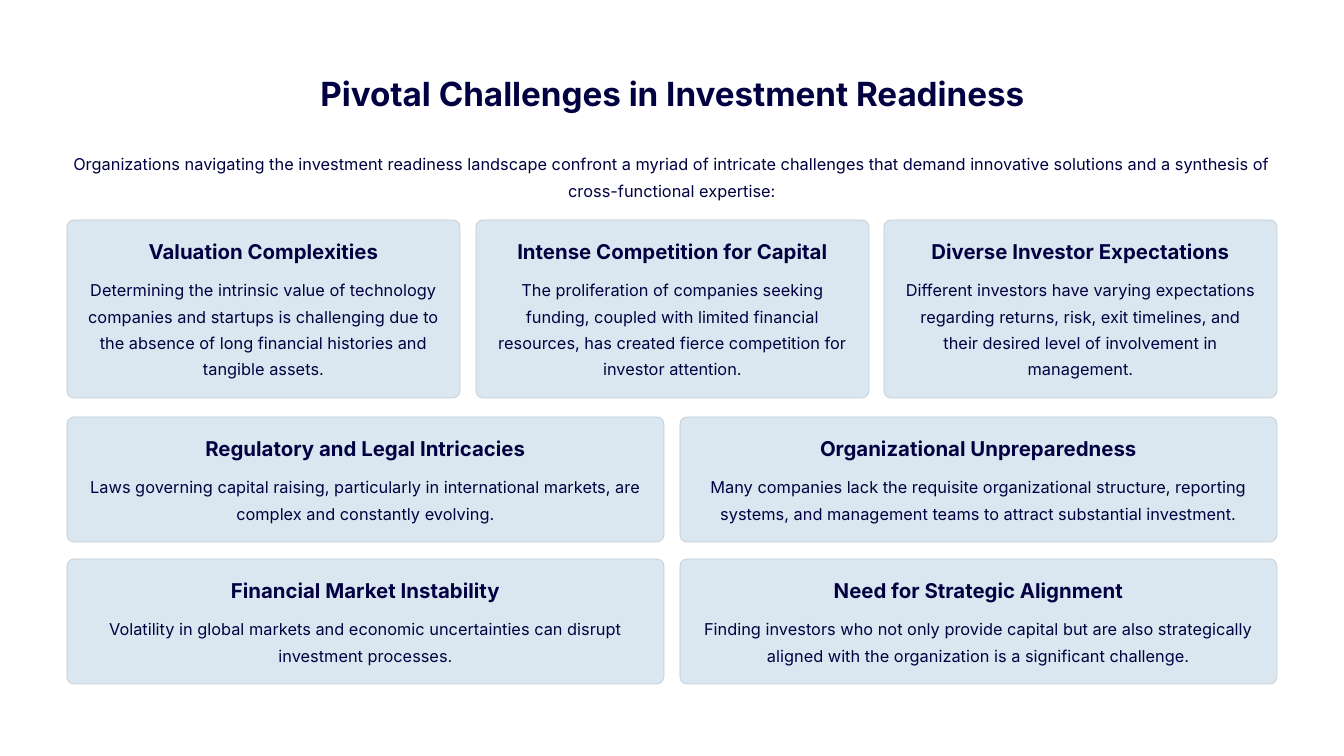
from pptx import Presentation
from pptx.dml.color import RGBColor
from pptx.enum.shapes import MSO_SHAPE
from pptx.enum.text import PP_ALIGN
from pptx.util import Emu, Pt

EMU_PER_PX = 914400 / 84
FONT = "Inter"
COLORS = {"paper": "FFFFFF", "ink": "010141", "card": "DBE7F0", "border": "C1CDD6"}
LEFT, WIDTH, GAP, PAD, RADIUS = 67, 1210, 16, 17, 7

TITLE = "Pivotal Challenges in Investment Readiness"
INTRO = (
    "Organizations navigating the investment readiness landscape confront a myriad of "
    "intricate challenges that demand innovative solutions and a synthesis of "
    "cross-functional expertise:"
)
ROWS = [
    (220, 178, [
        ("Valuation Complexities", 235,
         "Determining the intrinsic value of technology companies and startups is challenging "
         "due to the absence of long financial histories and tangible assets."),
        ("Intense Competition for Capital", 318,
         "The proliferation of companies seeking funding, coupled with limited financial "
         "resources, has created fierce competition for investor attention."),
        ("Diverse Investor Expectations", 306,
         "Different investors have varying expectations regarding returns, risk, exit "
         "timelines, and their desired level of involvement in management."),
    ]),
    (417, 125, [
        ("Regulatory and Legal Intricacies", 328,
         "Laws governing capital raising, particularly in international markets, are complex "
         "and constantly evolving."),
        ("Organizational Unpreparedness", 324,
         "Many companies lack the requisite organizational structure, reporting systems, and "
         "management teams to attract substantial investment."),
    ]),
    (559, 125, [
        ("Financial Market Instability", 276,
         "Volatility in global markets and economic uncertainties can disrupt investment "
         "processes."),
        ("Need for Strategic Alignment", 297,
         "Finding investors who not only provide capital but are also strategically aligned "
         "with the organization is a significant challenge."),
    ]),
]


def px(n):
    """Turn pixels into EMU."""
    return Emu(round(n * EMU_PER_PX))


def color(name):
    """Look up a named colour."""
    return RGBColor.from_string(COLORS[name])


def add_text(s, text, x, y, w, h, size=14, bold=False, leading=22.5, wrap=True):
    """Add a centred text box without insets."""
    tf = s.shapes.add_textbox(px(x), px(y), px(w), px(h)).text_frame
    tf.margin_left = tf.margin_right = tf.margin_top = tf.margin_bottom = 0
    tf.word_wrap = wrap
    p = tf.paragraphs[0]
    p.alignment = PP_ALIGN.CENTER
    p.line_spacing = Pt(leading)
    r = p.add_run()
    r.text = text
    r.font.name = FONT
    r.font.size = Pt(size)
    r.font.bold = bold
    r.font.color.rgb = color("ink")


def add_card(s, x, y, w, h, heading, heading_w, body):
    """Add a rounded card with a heading and body text."""
    sp = s.shapes.add_shape(MSO_SHAPE.ROUNDED_RECTANGLE, px(x), px(y), px(w), px(h))
    sp.adjustments[0] = RADIUS / h
    sp.shadow.inherit = False
    sp.fill.solid()
    sp.fill.fore_color.rgb = color("card")
    sp.line.color.rgb = color("border")
    sp.line.width = Pt(0.6)
    add_text(s, heading, x + (w - heading_w) / 2, y + 18, heading_w, 26,
             size=17.5, bold=True, leading=22, wrap=False)
    add_text(s, body, x + PAD, y + 54, w - 2 * PAD, h - 71)


def add_row(s, y, h, cards):
    """Spread a row of cards evenly across the content width."""
    step = (WIDTH + GAP) / len(cards)
    for i, card in enumerate(cards):
        add_card(s, LEFT + round(i * step), y, round(step) - GAP, h, *card)


def main():
    """Build and save the slide."""
    prs = Presentation()
    prs.slide_width, prs.slide_height = px(1344), px(756)
    s = prs.slides.add_slide(prs.slide_layouts[6])
    s.background.fill.solid()
    s.background.fill.fore_color.rgb = color("paper")
    add_text(s, TITLE, 317, 72, 711, 42, size=28.5, bold=True, leading=35.5, wrap=False)
    add_text(s, INTRO, LEFT, 148, WIDTH, 54)
    for row in ROWS:
        add_row(s, *row)
    prs.save("out.pptx")


if __name__ == "__main__":
    main()
